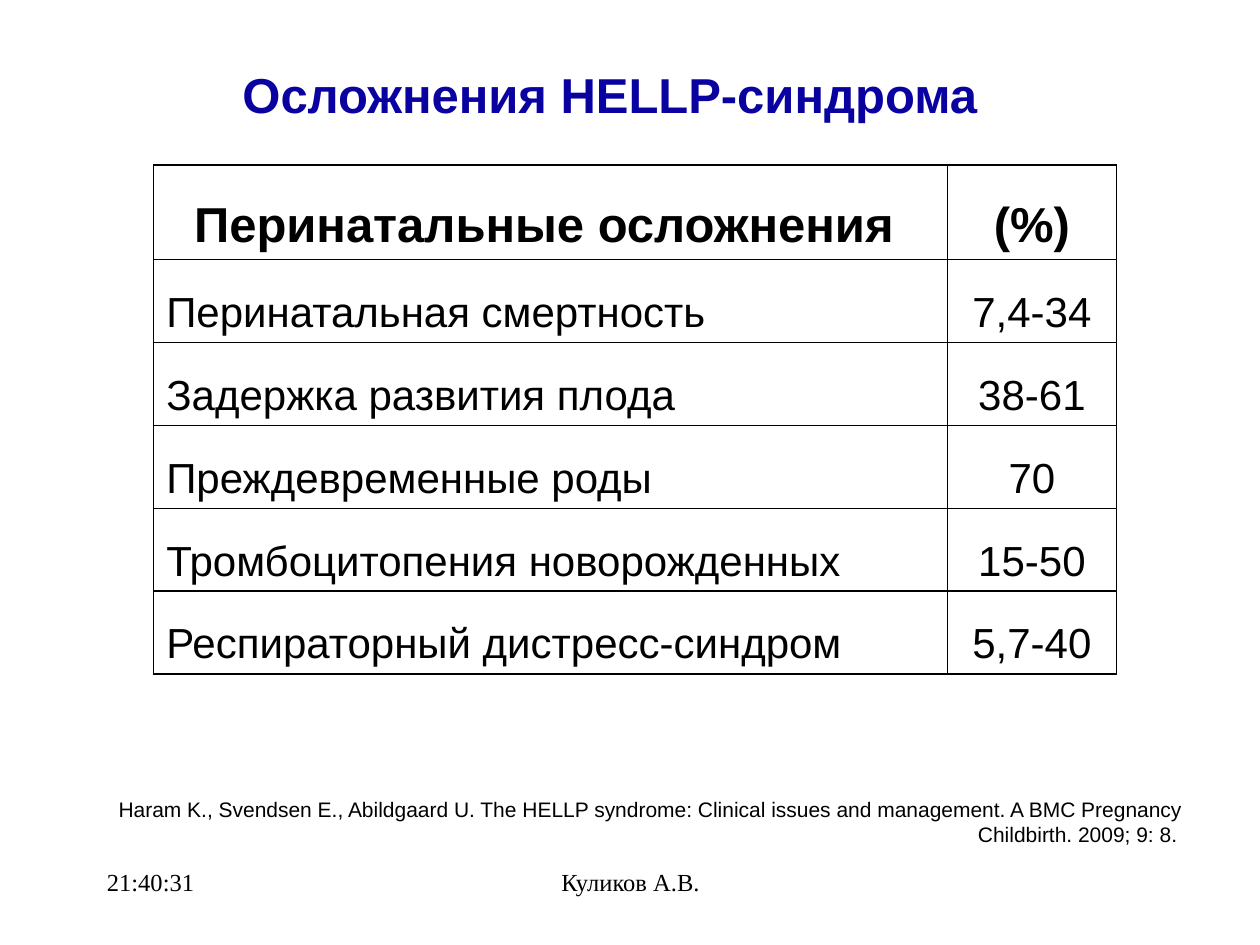
from dataclasses import dataclass

from lxml.etree import SubElement
from pptx import Presentation
from pptx.dml.color import RGBColor
from pptx.enum.text import MSO_ANCHOR, PP_ALIGN
from pptx.oxml.ns import qn
from pptx.util import Inches, Pt

BLACK = "000000"
NAVY = "0A02A0"


@dataclass(frozen=True)
class Style:
    size: int
    font: str = "Arial"
    color: str = BLACK
    bold: bool = False
    align: PP_ALIGN = PP_ALIGN.LEFT


@dataclass(frozen=True)
class Label:
    text: str
    left: float
    top: float
    width: float
    height: float
    style: Style
    anchor: MSO_ANCHOR = MSO_ANCHOR.TOP


@dataclass(frozen=True)
class Complication:
    name: str
    percent: str


LABELS = [
    Label("Осложнения HELLP-синдрома", 0.59, 0.44, 8.5, 0.61,
          Style(28, color=NAVY, bold=True, align=PP_ALIGN.CENTER), MSO_ANCHOR.MIDDLE),
    Label("Haram K., Svendsen E., Abildgaard U. The HELLP syndrome: Clinical issues "
          "and management. A BMC Pregnancy Childbirth. 2009; 9: 8. ",
          0.67, 6.27, 8.82, 0.5, Style(12, align=PP_ALIGN.RIGHT)),
    Label("21:40:31", 0.75, 6.83, 2.08, 0.5, Style(14, "Times New Roman")),
    Label("Куликов А.В.", 3.42, 6.83, 3.17, 0.5,
          Style(14, "Times New Roman", align=PP_ALIGN.CENTER)),
]

HEADER = Complication("Перинатальные осложнения ", "(%)")
COMPLICATIONS = [
    Complication("Перинатальная смертность", "7,4-34"),
    Complication("Задержка развития плода", "38-61"),
    Complication("Преждевременные роды", "70"),
    Complication("Тромбоцитопения новорожденных", "15-50"),
    Complication("Респираторный дистресс-синдром", "5,7-40"),
]
HEADER_STYLE = Style(28, bold=True, align=PP_ALIGN.CENTER)
NAME_STYLE = Style(24)
PERCENT_STYLE = Style(24, align=PP_ALIGN.CENTER)
COLUMN_WIDTHS = (6.3, 1.34)
ROW_HEIGHT = 0.62


def rgb(value: str) -> RGBColor:
    return RGBColor.from_string(value)


def write(paragraph, text: str, style: Style) -> None:
    paragraph.text = text
    paragraph.alignment = style.align
    paragraph.font.size = Pt(style.size)
    paragraph.font.name = style.font
    paragraph.font.bold = style.bold
    paragraph.font.color.rgb = rgb(style.color)


def add_label(slide, label: Label) -> None:
    box = slide.shapes.add_textbox(Inches(label.left), Inches(label.top),
                                   Inches(label.width), Inches(label.height))
    frame = box.text_frame
    frame.word_wrap = True
    frame.vertical_anchor = label.anchor
    write(frame.paragraphs[0], label.text, label.style)


def add_borders(cell, color: str, width: float) -> None:
    properties = cell._tc.get_or_add_tcPr()
    for side in ("a:lnL", "a:lnR", "a:lnT", "a:lnB"):
        line = SubElement(properties, qn(side), w=str(Pt(width)))
        fill = SubElement(line, qn("a:solidFill"))
        SubElement(fill, qn("a:srgbClr"), val=color)


def fill_cell(cell, text: str, style: Style) -> None:
    # Borders come before the fill in the cell properties
    add_borders(cell, BLACK, 1)
    cell.fill.background()
    cell.vertical_anchor = MSO_ANCHOR.MIDDLE
    paragraph = cell.text_frame.paragraphs[0]
    write(paragraph, text, style)
    paragraph.line_spacing = 1.5


def add_complications(slide, left: float, top: float) -> None:
    rows = [HEADER, *COMPLICATIONS]
    table = slide.shapes.add_table(
        len(rows), len(COLUMN_WIDTHS), Inches(left), Inches(top),
        Inches(sum(COLUMN_WIDTHS)), Inches(ROW_HEIGHT * len(rows))).table
    table.first_row = False
    table.horz_banding = False
    for column, width in zip(table.columns, COLUMN_WIDTHS):
        column.width = Inches(width)
    for index, row in enumerate(rows):
        is_header = row is HEADER
        fill_cell(table.cell(index, 0), row.name,
                  HEADER_STYLE if is_header else NAME_STYLE)
        fill_cell(table.cell(index, 1), row.percent,
                  HEADER_STYLE if is_header else PERCENT_STYLE)


def main() -> None:
    presentation = Presentation()
    presentation.slide_width = Inches(10)
    presentation.slide_height = Inches(7.5)
    slide = presentation.slides.add_slide(presentation.slide_layouts[6])

    # Table of perinatal complications
    add_complications(slide, 1.22, 1.31)

    # Title, citation and footer
    for label in LABELS:
        add_label(slide, label)

    presentation.save("out.pptx")


if __name__ == "__main__":
    main()
